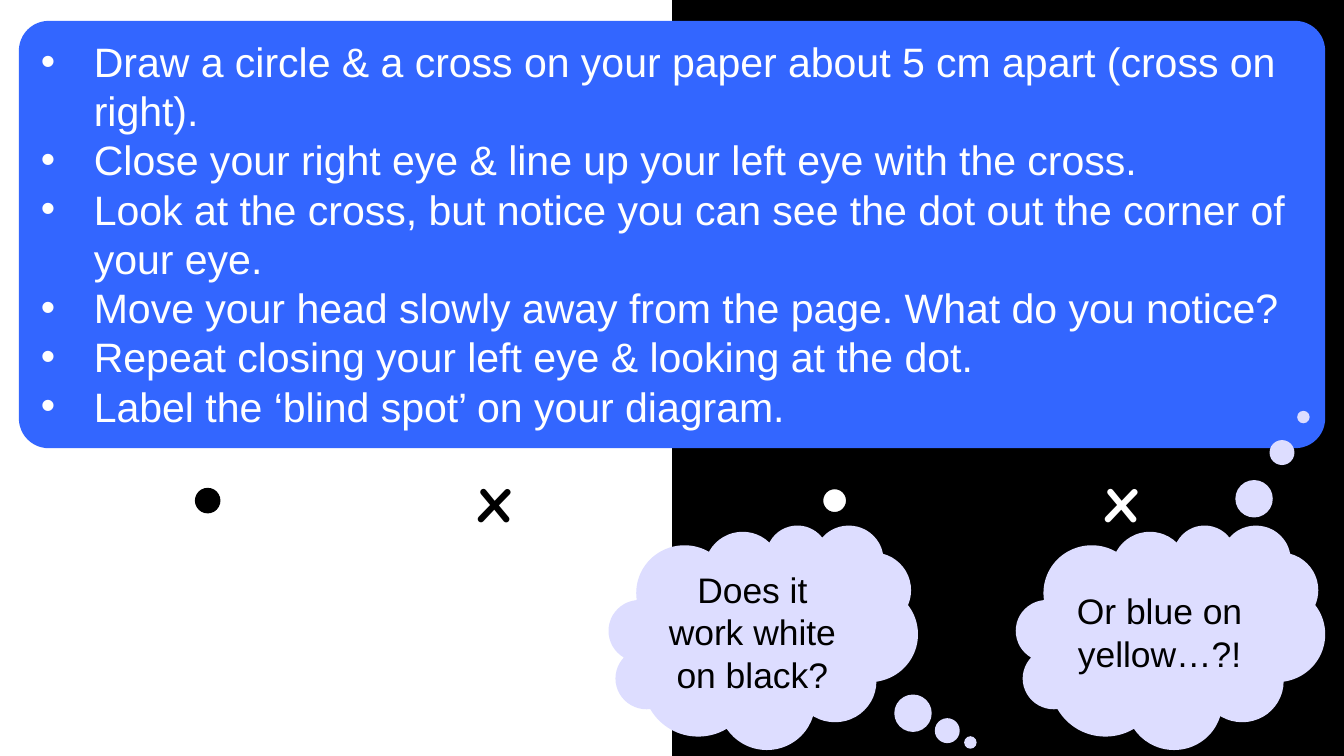
from dataclasses import dataclass

from lxml import etree
from pptx import Presentation
from pptx.dml.color import RGBColor
from pptx.enum.shapes import MSO_SHAPE
from pptx.enum.text import MSO_ANCHOR, PP_ALIGN
from pptx.oxml.ns import qn
from pptx.util import Pt

EMU_PER_PX = 4572  # 200 px to the inch
BLANK_LAYOUT = 6
RECTANGLE = MSO_SHAPE.RECTANGLE
ROUNDED = MSO_SHAPE.ROUNDED_RECTANGLE
OVAL = MSO_SHAPE.OVAL
CLOUD = MSO_SHAPE.CLOUD_CALLOUT
LEFT, CENTER = PP_ALIGN.LEFT, PP_ALIGN.CENTER
TOP, MIDDLE = MSO_ANCHOR.TOP, MSO_ANCHOR.MIDDLE

BLACK, WHITE, BLUE, LILAC = "000000", "FFFFFF", "3366FF", "DDDDFF"
SLIDE_WIDTH, SLIDE_HEIGHT = 2000, 1125
DOT_SIZE = 36
BULLET_INDENT = 79

INSTRUCTIONS = [
    "Draw a circle & a cross on your paper about 5 cm apart (cross on right).",
    "Close your right eye & line up your left eye with the cross.",
    "Look at the cross, but notice you can see the dot out the corner of your eye.",
    "Move your head slowly away from the page. What do you notice?",
    "Repeat closing your left eye & looking at the dot.",
    "Label the ‘blind spot’ on your diagram.",
]


@dataclass(frozen=True)
class Box:
    left: int
    top: int
    width: int
    height: int

    def emu(self) -> list[int]:
        return [px(n) for n in (self.left, self.top, self.width, self.height)]


@dataclass(frozen=True)
class EyeTest:
    """A dot and a cross of one colour."""
    dot_left: int
    cross_left: int
    color: str


@dataclass(frozen=True)
class Thought:
    left: int
    text: str
    tail: tuple[float, float]


WHITE_TEST = EyeTest(1224, 1626, WHITE)
BLACK_TEST = EyeTest(291, 692, BLACK)
THOUGHTS = [
    Thought(1512, "Or blue on yellow…?!", (0.43, -0.98)),
    Thought(906, "Does it work white on black?", (0.67, 0.47)),
]


def px(length: int) -> int:
    return length * EMU_PER_PX


def rgb(color: str) -> RGBColor:
    return RGBColor.from_string(color)


def add_bullet(paragraph) -> None:
    properties = paragraph._p.get_or_add_pPr()
    properties.set("marL", str(px(BULLET_INDENT)))
    properties.set("indent", str(-px(BULLET_INDENT)))
    etree.SubElement(properties, qn("a:buFont")).set("typeface", "Arial")
    etree.SubElement(properties, qn("a:buChar")).set("char", "•")


def write_text(shape, lines: list[str], *, size: int, color: str, font: str = "Arial",
               bold: bool = False, align=LEFT, anchor=TOP, bullets: bool = False) -> None:
    frame = shape.text_frame
    frame.word_wrap = True
    frame.vertical_anchor = anchor
    for index, line in enumerate(lines):
        paragraph = frame.add_paragraph() if index else frame.paragraphs[0]
        paragraph.alignment = align
        if bullets:
            add_bullet(paragraph)
        run = paragraph.add_run()
        run.text = line
        run.font.name = font
        run.font.size = Pt(size)
        run.font.bold = bold
        run.font.color.rgb = rgb(color)


def add_shape(slide, kind, box: Box, fill: str, *, line: str | None = None,
              adjustments: tuple[float, ...] = ()):
    shape = slide.shapes.add_shape(kind, *box.emu())
    shape.shadow.inherit = False
    shape.fill.solid()
    shape.fill.fore_color.rgb = rgb(fill)
    if line:
        shape.line.color.rgb = rgb(line)
        shape.line.width = Pt(0.75)
    else:
        shape.line.fill.background()
    for index, value in enumerate(adjustments):
        shape.adjustments[index] = value
    return shape


def add_eye_test(slide, test: EyeTest) -> None:
    dot = Box(test.dot_left, 727, DOT_SIZE, DOT_SIZE)
    add_shape(slide, OVAL, dot, test.color, line=BLACK)
    cross = slide.shapes.add_textbox(*Box(test.cross_left, 668, 106, 142).emu())
    write_text(cross, ["x"], size=36, color=test.color, font="Comic Neue", bold=True)


def add_thought(slide, thought: Thought) -> None:
    cloud = add_shape(slide, CLOUD, Box(thought.left, 781, 460, 334), LILAC,
                      adjustments=thought.tail)
    write_text(cloud, [thought.text], size=19, color=BLACK, align=CENTER, anchor=MIDDLE)


def main() -> None:
    presentation = Presentation()
    presentation.slide_width = px(SLIDE_WIDTH)
    presentation.slide_height = px(SLIDE_HEIGHT)
    slide = presentation.slides.add_slide(presentation.slide_layouts[BLANK_LAYOUT])
    slide.background.fill.solid()
    slide.background.fill.fore_color.rgb = rgb(BLACK)

    add_eye_test(slide, WHITE_TEST)
    add_shape(slide, RECTANGLE, Box(0, 0, SLIDE_WIDTH // 2, SLIDE_HEIGHT), WHITE)
    panel = add_shape(slide, ROUNDED, Box(28, 31, 1944, 636), BLUE, adjustments=(0.07,))
    write_text(panel, INSTRUCTIONS, size=22, color=WHITE, bullets=True)
    add_eye_test(slide, BLACK_TEST)
    for thought in THOUGHTS:
        add_thought(slide, thought)

    presentation.save("out.pptx")


if __name__ == "__main__":
    main()
